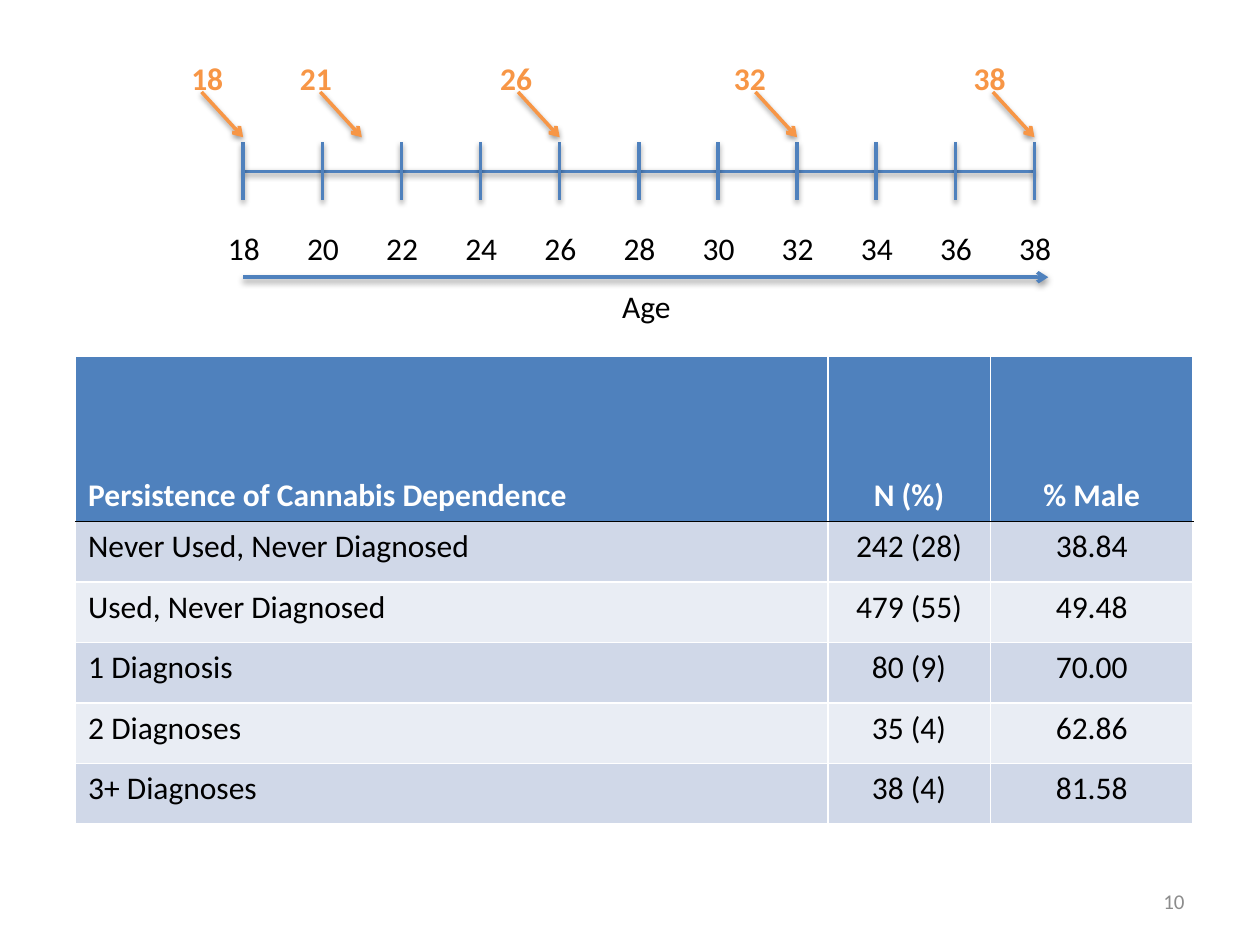
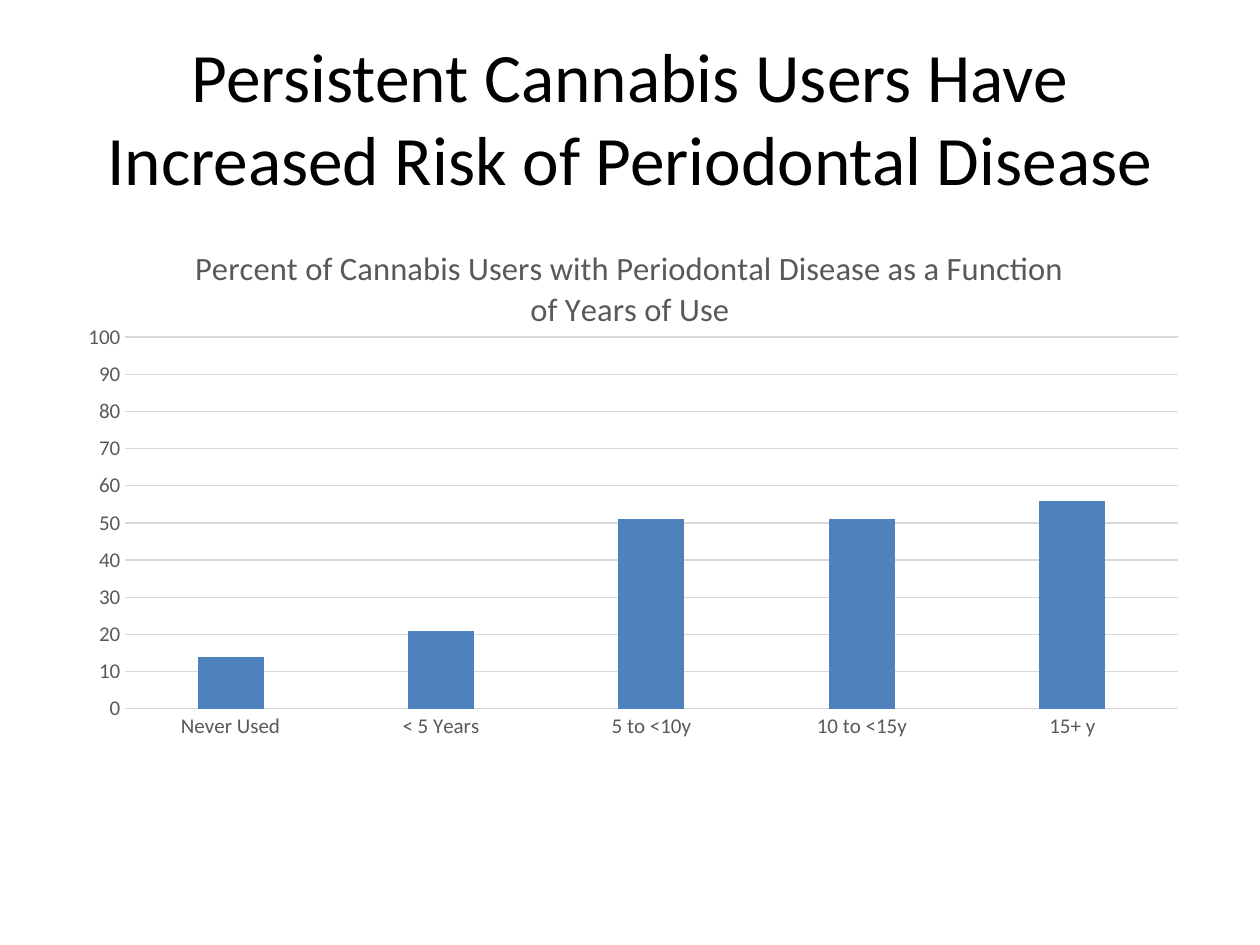
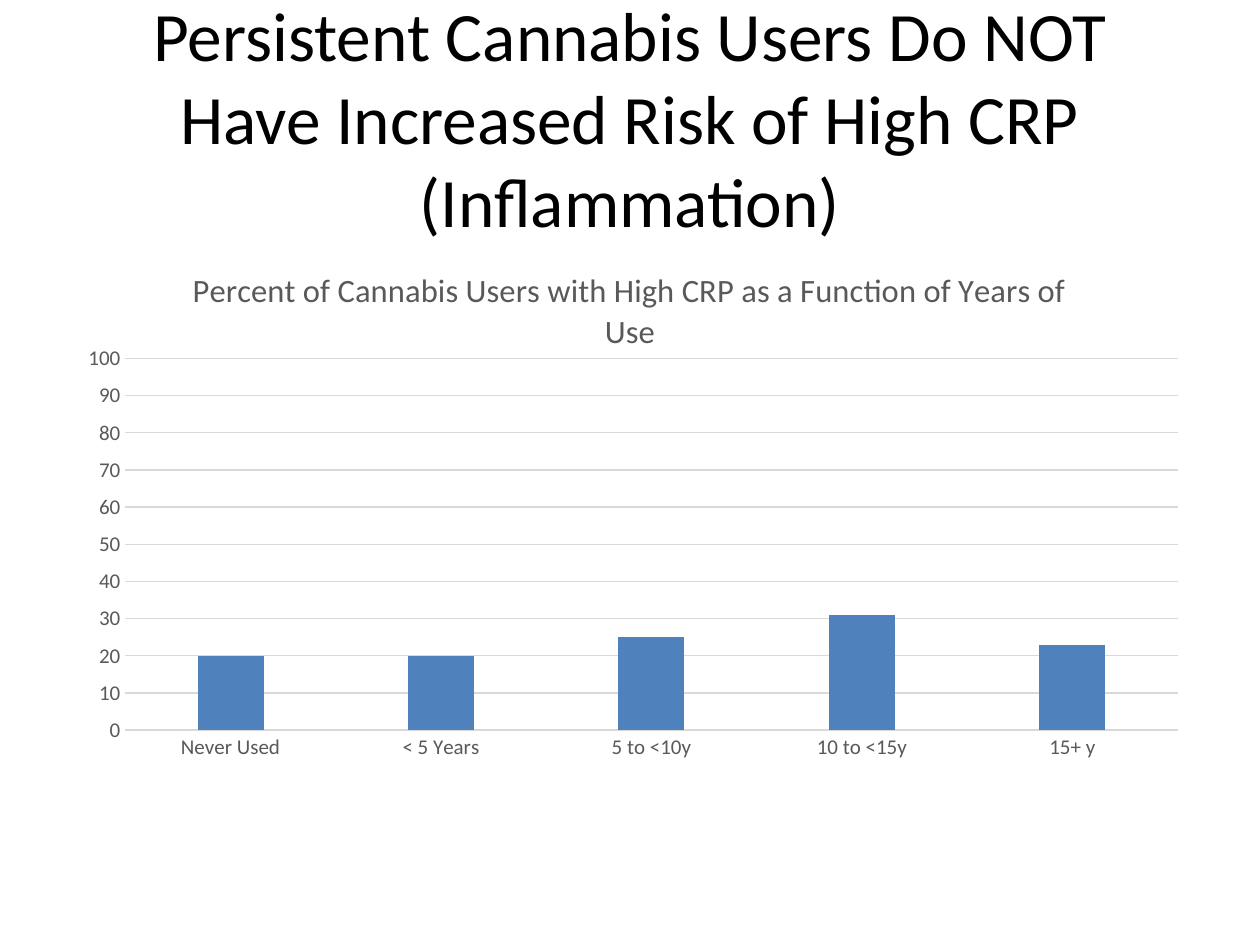
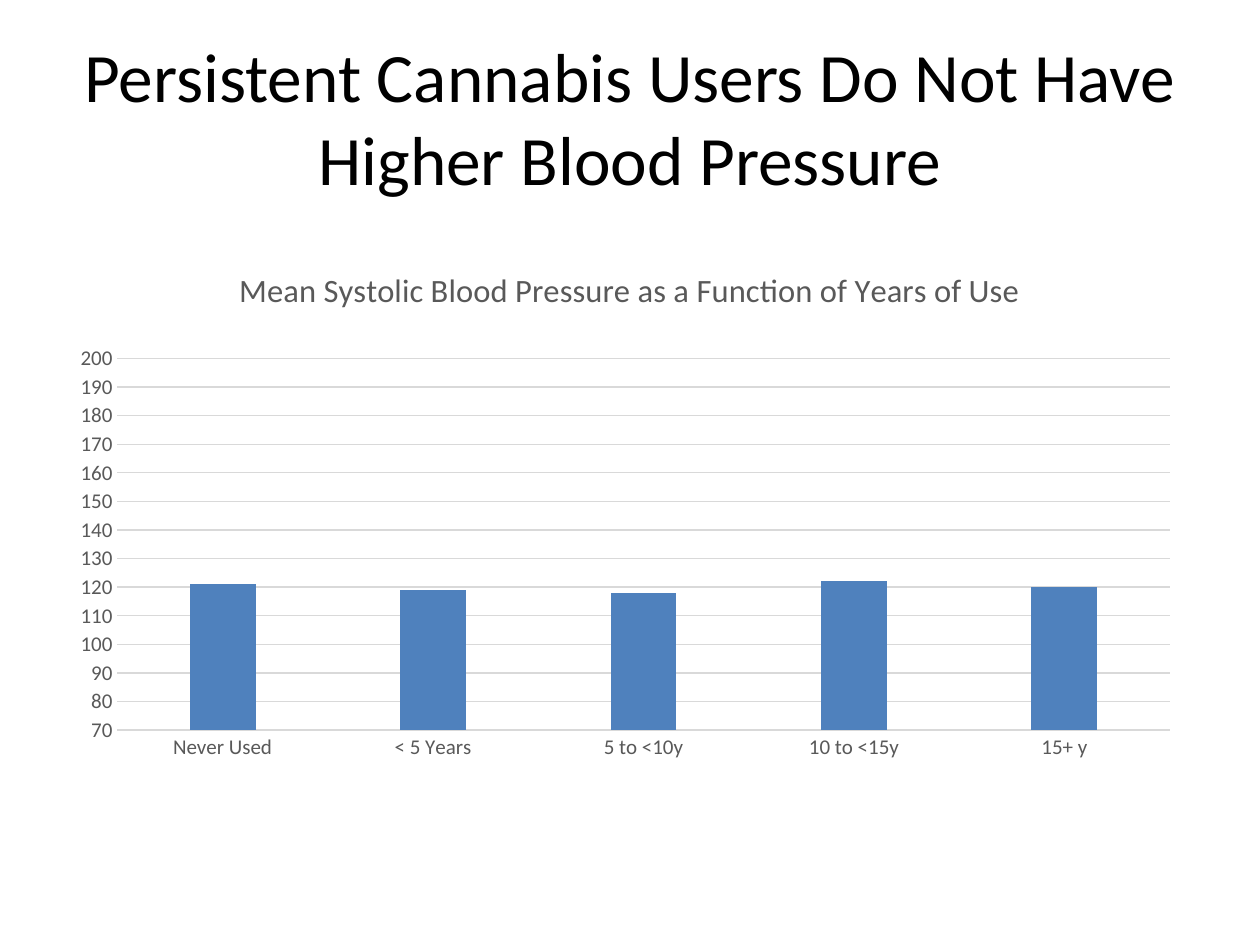
import pptx
import pptx.chart.data
import pptx.dml.color
import pptx.enum.chart
import pptx.enum.shapes
import pptx.enum.text
import pptx.oxml
import pptx.oxml.ns
import pptx.util

Inches = pptx.util.Inches
Pt = pptx.util.Pt
ALIGN = pptx.enum.text.PP_ALIGN
ANCHOR = pptx.enum.text.MSO_ANCHOR
FONT = "Calibri"
COLORS = {
    "blue": "4F81BD",
    "orange": "F79646",
    "black": "000000",
    "white": "FFFFFF",
    "band_dark": "D0D8E8",
    "band_light": "E9EDF4",
    "chart_text": "595959",
    "grid": "D9D9D9",
    "number": "8C8C8C",
}
NS = pptx.oxml.ns.nsdecls("a")
SHADOW = (
    f'<a:effectLst {NS}><a:outerShdw blurRad="40000" dist="20000" dir="5400000" rotWithShape="0">'
    f'<a:srgbClr val="{COLORS["black"]}"><a:alpha val="38000"/></a:srgbClr></a:outerShdw></a:effectLst>'
)
MEASURES = [0, 1, 2]
CATEGORIES = ["Never Used", "< 5 Years", "5 to <10y", "10 to <15y", "15+ y"]
GROUPS = [
    ("Persistence of Cannabis Dependence", "N (%)", "% Male"),
    ("Never Used, Never Diagnosed", "242 (28)", "38.84"),
    ("Used, Never Diagnosed", "479 (55)", "49.48"),
    ("1 Diagnosis", "80 (9)", "70.00"),
    ("2 Diagnoses", "35 (4)", "62.86"),
    ("3+ Diagnoses", "38 (4)", "81.58"),
]
CHART_SLIDES = [
    {
        "title": "Persistent Cannabis Users Have Increased Risk of Periodontal Disease",
        "caption": "Percent of Cannabis Users with Periodontal Disease as a Function of Years of Use",
        "values": [14, 21, 51, 51, 56],
        "top": 1.75,
    },
    {
        "title": "Persistent Cannabis Users Do NOT Have Increased Risk of High CRP (Inflammation)",
        "caption": "Percent of Cannabis Users with High CRP as a Function of Years of Use",
        "values": [20, 20, 25, 31, 23],
    },
    {
        "title": "Persistent Cannabis Users Do Not Have Higher Blood Pressure",
        "caption": "Mean Systolic Blood Pressure as a Function of Years of Use",
        "values": [121, 119, 118, 122, 120],
        "scale": (70, 200),
        "plot_left": 0.048,
    },
]


def rgb(name):
    """Return the named colour."""
    return pptx.dml.color.RGBColor.from_string(COLORS[name])


def style_font(font, size, color, bold=False):
    """Set the shared face with a size, colour and weight."""
    font.name = FONT
    font.size = Pt(size)
    font.bold = bold
    font.color.rgb = rgb(color)


def add_text(shapes, text, box, size=18, color="black", bold=False, align=ALIGN.CENTER, anchor=ANCHOR.TOP):
    """Add a one-paragraph text box."""
    tf = shapes.add_textbox(*map(Inches, box)).text_frame
    tf.word_wrap = True
    tf.vertical_anchor = anchor
    p = tf.paragraphs[0]
    p.text = text
    p.alignment = align
    style_font(p.font, size, color, bold)


def add_line(shapes, x1, y1, x2, y2, color="blue", arrow=False):
    """Add a shadowed line, optionally with an arrowhead at its end."""
    line = shapes.add_connector(
        pptx.enum.shapes.MSO_CONNECTOR.STRAIGHT, *map(Inches, (x1, y1, x2, y2))
    )
    line.line.color.rgb = rgb(color)
    line.line.width = Pt(2)
    if arrow:
        line.line._get_or_add_ln().append(pptx.oxml.parse_xml(f'<a:tailEnd {NS} type="arrow"/>'))
    line._element.spPr.append(pptx.oxml.parse_xml(SHADOW))


def add_timeline(s, left, top, width):
    """Draw the age axis with its ticks and the assessment ages."""
    shapes = s.shapes.add_group_shape().shapes
    first, last, step = 18, 38, 2
    axis_y = top + 0.94

    def age_x(age):
        """Return the horizontal place of an age."""
        return left + width * (age - first) / (last - first)

    add_line(shapes, left, axis_y, left + width, axis_y)
    for age in range(first, last + 1, step):
        x = age_x(age)
        add_line(shapes, x, axis_y - 0.23, x, axis_y + 0.23)
        add_text(shapes, str(age), (x - 0.34, top + 1.35, 0.69, 0.33))
    for age, offset in {18: -0.51, 21: -0.59, 26: -0.57, 32: -0.6, 38: -0.58}.items():
        x = age_x(age)
        add_line(shapes, x - 0.33, top + 0.31, x, top + 0.67, "orange", arrow=True)
        add_text(shapes, str(age), (x + offset, top, 0.5, 0.33), color="orange", bold=True, align=ALIGN.LEFT)
    add_line(shapes, left, top + 1.78, left + width + 0.11, top + 1.78, arrow=True)
    add_text(shapes, "Age", (left, top + 1.81, width + 0.12, 0.33))


def set_borders(cell, **sides):
    """Give the cell one-point borders in the colours named by side."""
    tcPr = cell._tc.get_or_add_tcPr()
    for side in "LRTB":
        color = COLORS[sides.get(side, "white")]
        tcPr.append(pptx.oxml.parse_xml(
            f'<a:ln{side} {NS} w="12700"><a:solidFill><a:srgbClr val="{color}"/></a:solidFill></a:ln{side}>'
        ))


def add_groups_table(s, left, top):
    """Add the table of diagnosis groups."""
    widths = [5.97, 1.29, 1.61]
    heights = [1.31] + [0.48] * (len(GROUPS) - 1)
    table = s.shapes.add_table(
        len(heights), len(widths), *map(Inches, (left, top, sum(widths), sum(heights)))
    ).table
    for column, width in zip(table.columns, widths):
        column.width = Inches(width)
    for i, (row, height, texts) in enumerate(zip(table.rows, heights, GROUPS)):
        row.height = Inches(height)
        header = i == 0
        fill = "blue" if header else "band_dark" if i % 2 else "band_light"
        edges = {0: {"B": "black"}, 1: {"T": "black"}}.get(i, {})
        for j, (cell, text) in enumerate(zip(row.cells, texts)):
            set_borders(cell, **edges)
            cell.fill.solid()
            cell.fill.fore_color.rgb = rgb(fill)
            cell.vertical_anchor = ANCHOR.BOTTOM if header else ANCHOR.TOP
            p = cell.text_frame.paragraphs[0]
            p.text = text
            p.alignment = ALIGN.CENTER if j else ALIGN.LEFT
            style_font(p.font, 18, "white" if header else "black", header)


def add_sample_slide(prs):
    """Add the slide with the timeline and the group table."""
    s = prs.slides.add_slide(prs.slide_layouts[6])
    add_groups_table(s, 0.6, 2.83)
    add_text(s.shapes, "10", (7.17, 6.95, 2.33, 0.4), 12, "number", align=ALIGN.RIGHT, anchor=ANCHOR.MIDDLE)
    add_timeline(s, 1.93, 0.42, 6.28)


def set_title(s, text):
    """Place and format the slide title."""
    title = s.shapes.title
    title.left, title.top, title.width, title.height = map(Inches, (0.5, 0.3, 9, 1.25))
    tf = title.text_frame
    tf.auto_size = pptx.enum.text.MSO_AUTO_SIZE.NONE
    tf.vertical_anchor = ANCHOR.MIDDLE
    p = tf.paragraphs[0]
    p.text = text
    p.alignment = ALIGN.CENTER
    style_font(p.font, 39.6, "black")


def set_plot_area(chart, x, y, w, h):
    """Fix the inner plot area as fractions of the chart."""
    plot_area = chart._chartSpace.chart.plotArea
    for layout in plot_area.findall(pptx.oxml.ns.qn("c:layout")):
        plot_area.remove(layout)
    sizes = "".join(f'<c:{k} val="{v}"/>' for k, v in zip("xywh", (x, y, w, h)))
    plot_area.insert(0, pptx.oxml.parse_xml(
        f'<c:layout {pptx.oxml.ns.nsdecls("c")}><c:manualLayout><c:layoutTarget val="inner"/>'
        f'<c:xMode val="edge"/><c:yMode val="edge"/>{sizes}</c:manualLayout></c:layout>'
    ))


def add_column_chart(s, box, caption, values, scale, plot_left):
    """Add the column chart by years of use."""
    data = pptx.chart.data.CategoryChartData()
    data.categories = CATEGORIES
    data.add_series("Series 1", values)
    chart = s.shapes.add_chart(
        pptx.enum.chart.XL_CHART_TYPE.COLUMN_CLUSTERED, *map(Inches, box), data
    ).chart
    style_font(chart.font, 10, "black")
    chart.has_legend = False
    chart.has_title = True
    p = chart.chart_title.text_frame.paragraphs[0]
    p.text = caption
    style_font(p.font, 18.6, "chart_text")
    chart.chart_title.include_in_layout = False

    plot = chart.plots[0]
    plot.vary_by_categories = False
    plot.gap_width = 219
    plot.overlap = -27
    bars = plot.series[0].format.fill
    bars.solid()
    bars.fore_color.rgb = rgb("blue")

    cat_axis, val_axis = chart.category_axis, chart.value_axis
    for axis in (cat_axis, val_axis):
        axis.major_tick_mark = axis.minor_tick_mark = pptx.enum.chart.XL_TICK_MARK.NONE
        style_font(axis.tick_labels.font, 12, "chart_text")
    val_axis.minimum_scale, val_axis.maximum_scale = scale
    val_axis.major_unit = 10
    val_axis.format.line.fill.background()
    for line in (cat_axis.format.line, val_axis.major_gridlines.format.line):
        line.color.rgb = rgb("grid")
        line.width = Pt(0.75)
    set_plot_area(chart, plot_left, 0.187, 0.928, 0.596)


def add_chart_slide(prs, title, caption, values, top=1.92, scale=(0, 100), plot_left=0.055):
    """Add a slide with a title and one column chart."""
    s = prs.slides.add_slide(prs.slide_layouts[5])
    set_title(s, title)
    add_column_chart(s, (0.5, top, 9, 4.95), caption, values, scale, plot_left)


def main():
    """Build and save the presentation."""
    prs = pptx.Presentation()
    prs.slide_width, prs.slide_height = Inches(10), Inches(7.5)
    add_sample_slide(prs)
    for content in CHART_SLIDES:
        add_chart_slide(prs, **content)
    prs.save("out.pptx")


if __name__ == "__main__":
    main()
